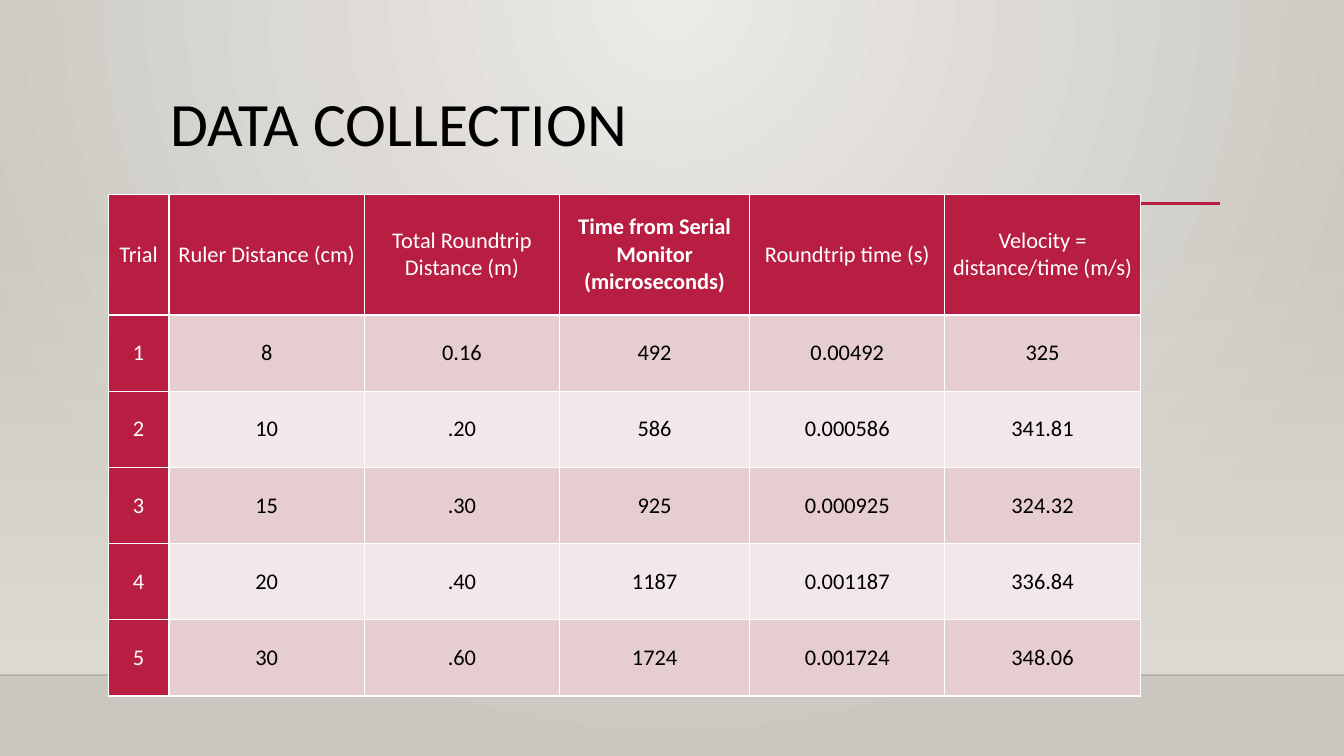
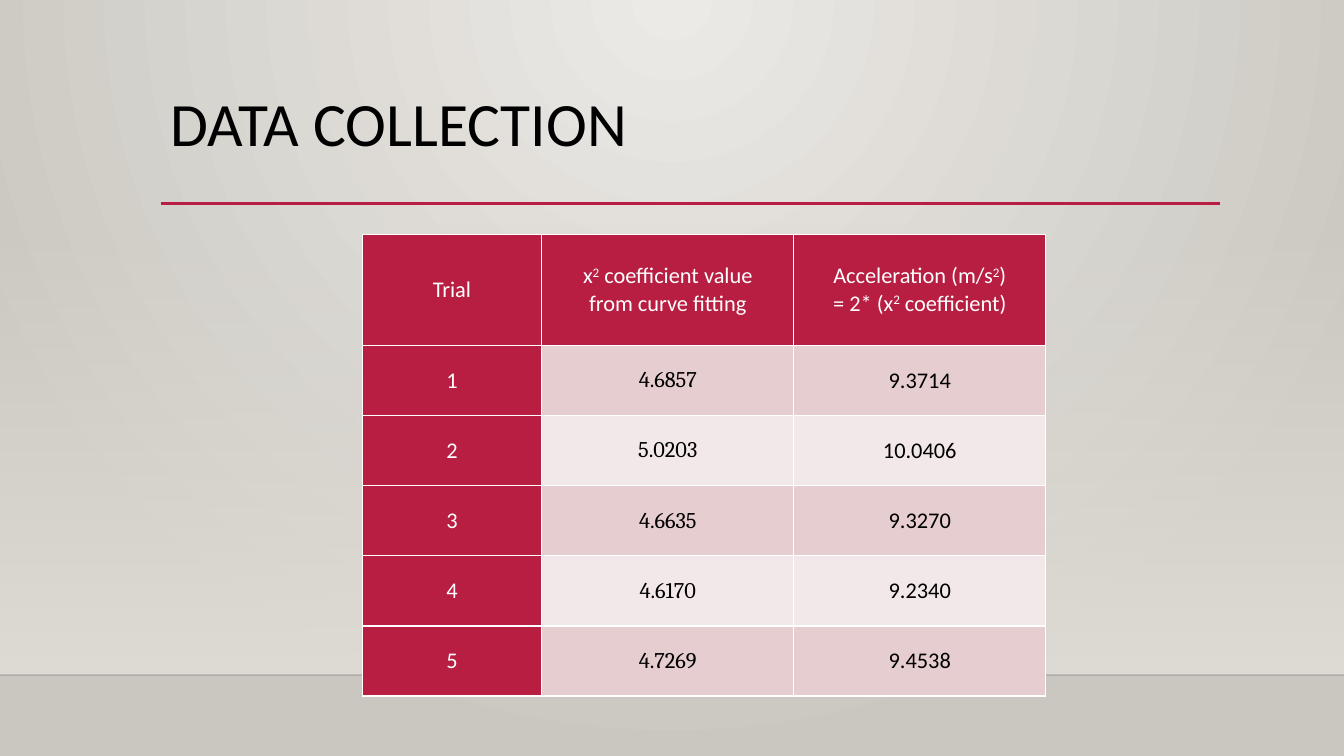
from lxml.etree import SubElement
from pptx import Presentation
from pptx.dml.color import RGBColor
from pptx.enum.shapes import MSO_CONNECTOR as Connector, MSO_SHAPE as Shape
from pptx.enum.text import MSO_ANCHOR as Anchor, PP_ALIGN as Align
from pptx.oxml.ns import qn
from pptx.util import Emu, Pt

EMU_PER_PX = 9525
WIDTH, HEIGHT = 1280, 720
FONT, NUMBER_FONT = "Calibri", "Cambria"
CRIMSON, WHITE, BLACK = "B71E42", "FFFFFF", "000000"
BANDS = ("E6CDCF", "F3E8E9")
BACKDROP = ("ECEAE7", "CAC7C1")
FLOOR, FLOOR_EDGE = "DFDBD5", "000001"
FLOOR_TOP, FLOOR_BOTTOM = 212, 643
LEFT, RULE_RIGHT, RULE_Y = 153, 1162, 194


def px(length):
    return Emu(round(length * EMU_PER_PX))


def color(code):
    return RGBColor.from_string(code)


def set_alpha(color_element, percent):
    SubElement(color_element, qn("a:alpha"), val=str(percent * 1000))


class Deck:
    """Holds the shared style, the layout and the current slide."""

    def __init__(self):
        self.presentation = Presentation()
        self.presentation.slide_width = px(WIDTH)
        self.presentation.slide_height = px(HEIGHT)
        self.layout = self.presentation.slide_layouts[5]
        self.slide = None

    def gradient(self, fill, owner, codes):
        fill.gradient()
        for stop, code in zip(fill.gradient_stops, codes):
            stop.color.rgb = color(code)
        return owner.find(".//" + qn("a:gradFill"))

    def backdrop(self):
        gradient = self.gradient(self.layout.background.fill, self.layout._element, BACKDROP)
        gradient.remove(gradient.find(qn("a:lin")))
        circle = SubElement(gradient, qn("a:path"), path="circle")
        SubElement(circle, qn("a:fillToRect"), l="43000", t="0", r="43000", b="100000")

    def move_to_layout(self, shape):
        tree = self.layout.shapes._spTree
        shape._element.find(".//" + qn("p:cNvPr")).set("id", str(100 + len(tree)))
        tree.append(shape._element)

    def floor(self):
        shape = self.slide.shapes.add_shape(
            Shape.RECTANGLE, 0, px(FLOOR_TOP), px(WIDTH), px(FLOOR_BOTTOM - FLOOR_TOP))
        shape.shadow.inherit = False
        shape.line.fill.background()
        gradient = self.gradient(shape.fill, shape._element, (FLOOR, FLOOR))
        shape.fill.gradient_angle = 270
        set_alpha(gradient.find(".//" + qn("a:srgbClr")), 0)
        self.move_to_layout(shape)

    def rule(self, left, right, y, code, points, alpha=100):
        line = self.slide.shapes.add_connector(
            Connector.STRAIGHT, px(left), px(y), px(right), px(y))
        line.line.color.rgb = color(code)
        line.line.width = Pt(points)
        set_alpha(line._element.spPr.find(".//" + qn("a:srgbClr")), alpha)
        SubElement(line._element.spPr, qn("a:effectLst"))
        self.move_to_layout(line)

    def decorate_layout(self):
        self.backdrop()
        self.floor()
        self.rule(0, WIDTH, FLOOR_BOTTOM, FLOOR_EDGE, 1, 20)
        self.rule(LEFT, RULE_RIGHT, RULE_Y, CRIMSON, 2.5)

    def add_slide(self, title):
        self.slide = self.presentation.slides.add_slide(self.layout)
        if len(self.presentation.slides) == 1:
            self.decorate_layout()
        shape = self.slide.shapes.title
        shape.left, shape.top, shape.width, shape.height = map(px, (LEFT, 84, 1008, 110))
        shape.text_frame.text = title
        shape.text_frame.vertical_anchor = Anchor.TOP
        paragraph = shape.text_frame.paragraphs[0]
        paragraph.alignment = Align.LEFT
        paragraph.line_spacing = 0.9
        self.format_run(paragraph.runs[0], 44, BLACK)

    def format_run(self, run, size, code, font=FONT, bold=False):
        run.font.name = font
        run.font.size = Pt(size)
        run.font.bold = bold
        run.font.color.rgb = color(code)

    def borders(self, cell):
        properties = cell._tc.get_or_add_tcPr()
        for side in ("lnL", "lnR", "lnT", "lnB"):
            line = SubElement(properties, qn(f"a:{side}"), w=str(Pt(1)))
            SubElement(SubElement(line, qn("a:solidFill")), qn("a:srgbClr"), val=WHITE)

    def cell(self, cell, text, fill, code, font, bold):
        """Fills one cell; text between carets is raised."""
        self.borders(cell)
        cell.fill.solid()
        cell.fill.fore_color.rgb = color(fill)
        cell.vertical_anchor = Anchor.MIDDLE
        cell.margin_left = cell.margin_right = px(7)
        cell.margin_top = cell.margin_bottom = 0
        paragraph = cell.text_frame.paragraphs[0]
        paragraph.alignment = Align.CENTER
        for line_number, line in enumerate(text.split("\n")):
            if line_number:
                paragraph.add_line_break()
            for part_number, part in enumerate(line.split("^")):
                run = paragraph.add_run()
                run.text = part
                self.format_run(run, 16, code, font, bold)
                if part_number % 2:
                    run.font._element.set("baseline", "30000")

    def table(self, left, top, widths, height, header_height, rows,
              bold_header=None, number_column=None):
        table = self.slide.shapes.add_table(
            len(rows), len(widths), px(left), px(top), px(sum(widths)), px(height)).table
        table.horz_banding = False
        for column, width in zip(table.columns, widths):
            column.width = px(width)
        body_height = (height - header_height) / (len(rows) - 1)
        for row_number, values in enumerate(rows):
            table.rows[row_number].height = px(body_height if row_number else header_height)
            for column_number, text in enumerate(values):
                heading = row_number == 0 or column_number == 0
                fill = CRIMSON if heading else BANDS[(row_number - 1) % 2]
                is_number = not heading and column_number == number_column
                self.cell(table.cell(row_number, column_number), text, fill,
                          WHITE if heading else BLACK,
                          NUMBER_FONT if is_number else FONT,
                          row_number == 0 and column_number == bold_header)


def main():
    deck = Deck()
    deck.add_slide("DATA COLLECTION")
    deck.table(103, 185, (58, 186, 186, 181, 186, 186), 478, 115, (
        ("Trial", "Ruler Distance (cm)", "Total Roundtrip Distance (m)",
         "Time from Serial Monitor (microseconds)", "Roundtrip time (s)",
         "Velocity = distance/time (m/s)"),
        ("1", "8", "0.16", "492", "0.00492", "325"),
        ("2", "10", ".20", "586", "0.000586", "341.81"),
        ("3", "15", ".30", "925", "0.000925", "324.32"),
        ("4", "20", ".40", "1187", "0.001187", "336.84"),
        ("5", "30", ".60", "1724", "0.001724", "348.06"),
    ), bold_header=3)

    deck.add_slide("DATA COLLECTION")
    deck.table(345, 223, (171, 240, 240), 440, 106, (
        ("Trial", "x^2^ coefficient value\nfrom curve fitting",
         "Acceleration (m/s^2^)\n= 2* (x^2^ coefficient)"),
        ("1", "4.6857", "9.3714"),
        ("2", "5.0203", "10.0406"),
        ("3", "4.6635", "9.3270"),
        ("4", "4.6170", "9.2340"),
        ("5", "4.7269", "9.4538"),
    ), number_column=1)
    deck.presentation.save("out.pptx")


if __name__ == "__main__":
    main()
